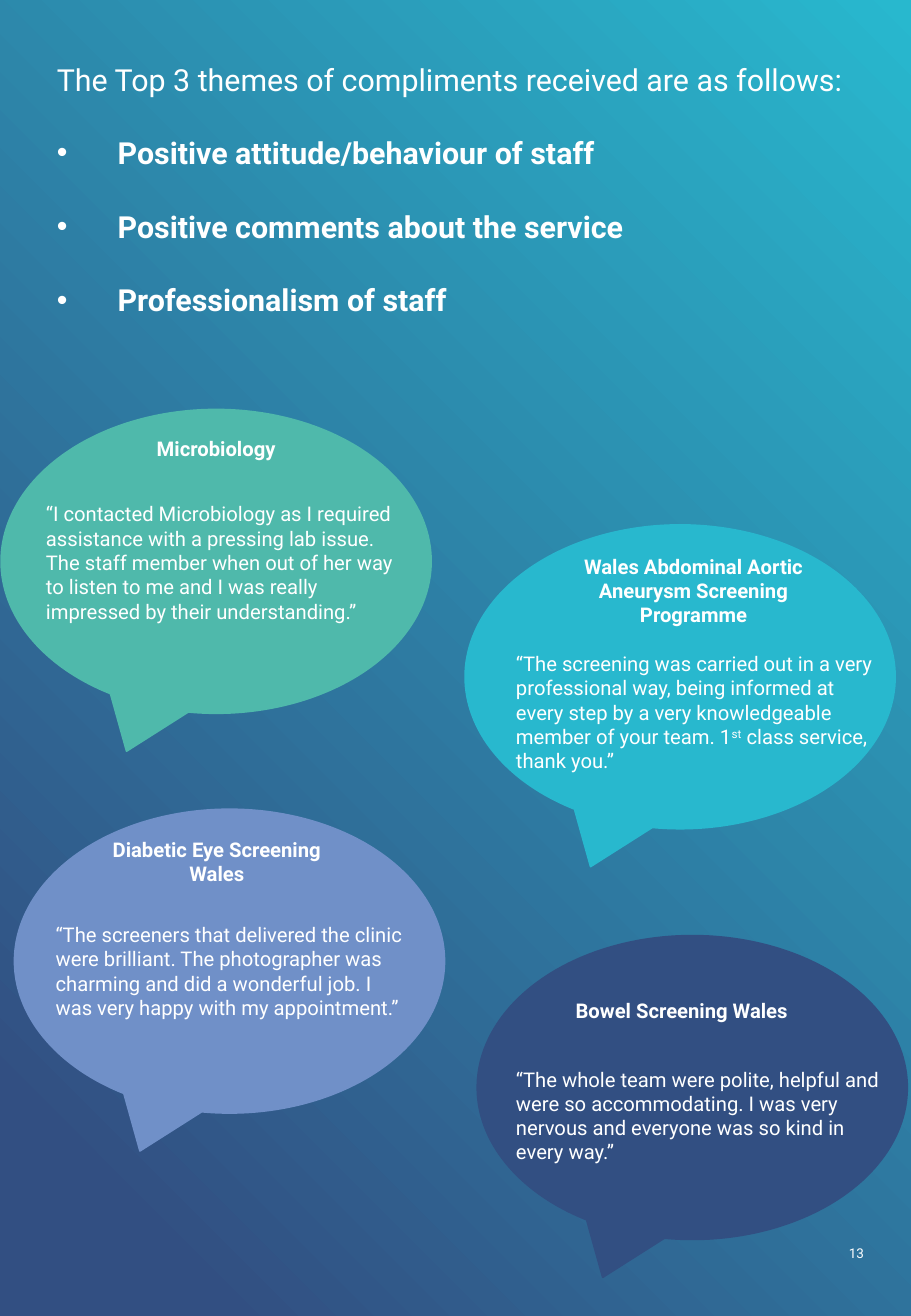
from dataclasses import dataclass

from lxml.etree import SubElement
from pptx import Presentation
from pptx.dml.color import RGBColor
from pptx.enum.shapes import MSO_SHAPE as Shape
from pptx.enum.text import MSO_AUTO_SIZE as AutoSize, PP_ALIGN as Align
from pptx.oxml.ns import qn
from pptx.slide import Slide
from pptx.text.text import TextFrame, _Paragraph as Paragraph
from pptx.util import Inches, Pt

COLOURS = {
    "white": "FFFFFF",
    "navy": "324F82",
    "cyan": "28B8CE",
    "green": "4FB9AB",
    "periwinkle": "7090C8",
}
FONT = "Roboto"
BUBBLE_WIDTH, BUBBLE_HEIGHT = 3.54, 2.5

Box = tuple[float, float, float, float]


@dataclass(frozen=True)
class Compliment:
    service: str
    quote: tuple[str, ...]
    colour: str
    bubble_at: tuple[float, float]
    service_box: Box
    quote_box: Box
    service_align: Align = Align.CENTER


COMPLIMENTS = [
    Compliment(
        "Diabetic Eye Screening Wales",
        ("“The screeners that delivered the clinic were brilliant. The photographer was "
         "charming and did a wonderful job. I was very happy with my appointment.”",),
        "periwinkle", (0.12, 6.66), (0.78, 6.84, 2.01, 0.5), (0.36, 7.54, 3.06, 0.91),
    ),
    Compliment(
        "Microbiology",
        ("“I contacted Microbiology as I required assistance with a pressing lab issue. "
         "The staff member when out of her way to listen to me and I was really "
         "impressed by their understanding.”",),
        "green", (0.01, 3.37), (1.06, 3.54, 1.44, 0.3), (0.28, 4.08, 3.22, 1.11),
    ),
    Compliment(
        "Wales Abdominal Aortic Aneurysm Screening Programme",
        ("“The screening was carried out in a very professional way, being informed at "
         "every step by a very knowledgeable member of your team. 1",
         "st", " class service, thank you.”"),
        "cyan", (3.83, 4.32), (4.43, 4.51, 2.56, 0.71), (4.15, 5.31, 3.24, 1.11),
    ),
    Compliment(
        "Bowel Screening Wales",
        ("“The whole team were polite, helpful and were so accommodating. I was very "
         "nervous and everyone was so kind in every way.”",),
        "navy", (3.93, 7.7), (4.64, 8.17, 2.25, 0.3), (4.15, 8.73, 3.24, 0.91),
        Align.LEFT,
    ),
]

INTRO = "The Top 3 themes of compliments received are as follows:"
THEMES = [
    "Positive attitude/behaviour of staff",
    "Positive comments about the service",
    "Professionalism of staff",
]


def rgb(name: str) -> RGBColor:
    return RGBColor.from_string(COLOURS[name])


def paint_background(slide: Slide) -> None:
    fill = slide.background.fill
    fill.gradient()
    fill.gradient_angle = 45
    for stop, position, colour in zip(fill.gradient_stops, (0.1, 1), ("navy", "cyan")):
        stop.position = position
        stop.color.rgb = rgb(colour)


def add_frame(slide: Slide, box: Box) -> TextFrame:
    frame = slide.shapes.add_textbox(*map(Inches, box)).text_frame
    frame.word_wrap = True
    frame.auto_size = AutoSize.SHAPE_TO_FIT_TEXT
    return frame


def format_runs(paragraph: Paragraph, size: float, bold: bool = False) -> None:
    for run in paragraph.runs:
        run.font.name = FONT
        run.font.size = Pt(size)
        run.font.bold = bold
        run.font.color.rgb = rgb("white")


def add_themes(slide: Slide) -> None:
    frame = add_frame(slide, (0.37, 0.45, 6.91, 2.22))
    frame.text = INTRO
    format_runs(frame.paragraphs[0], 18)
    for theme in THEMES:
        paragraph = frame.add_paragraph()
        paragraph.text = theme
        paragraph.space_before = Pt(22)
        properties = paragraph._p.get_or_add_pPr()
        properties.set("marL", str(Inches(0.5)))
        properties.set("indent", str(-Inches(0.5)))
        SubElement(properties, qn("a:buFont"), typeface="Arial")
        SubElement(properties, qn("a:buChar"), char="•")
        format_runs(paragraph, 18, bold=True)


def add_compliment(slide: Slide, compliment: Compliment) -> None:
    bubble = slide.shapes.add_shape(
        Shape.OVAL_CALLOUT,
        *map(Inches, (*compliment.bubble_at, BUBBLE_WIDTH, BUBBLE_HEIGHT)),
    )
    bubble.shadow.inherit = False
    bubble.fill.solid()
    bubble.fill.fore_color.rgb = rgb(compliment.colour)
    bubble.line.color.rgb = rgb(compliment.colour)
    bubble.line.width = Pt(1)

    service = add_frame(slide, compliment.service_box).paragraphs[0]
    service.text = compliment.service
    service.alignment = compliment.service_align
    format_runs(service, 12, bold=True)

    quote = add_frame(slide, compliment.quote_box).paragraphs[0]
    for position, words in enumerate(compliment.quote):
        run = quote.add_run()
        run.text = words
        if position == 1:
            run._r.get_or_add_rPr().set("baseline", "30000")
    format_runs(quote, 12)


def add_page_number(slide: Slide) -> None:
    frame = add_frame(slide, (6.89, 10.2, 0.34, 0.24))
    frame.text = "13"
    format_runs(frame.paragraphs[0], 8)


def main() -> None:
    deck = Presentation()
    deck.slide_width, deck.slide_height = Inches(7.5), Inches(10.83)
    slide = deck.slides.add_slide(deck.slide_layouts[6])
    paint_background(slide)
    add_themes(slide)
    for compliment in COMPLIMENTS:
        add_compliment(slide, compliment)
    add_page_number(slide)
    deck.save("out.pptx")


if __name__ == "__main__":
    main()
